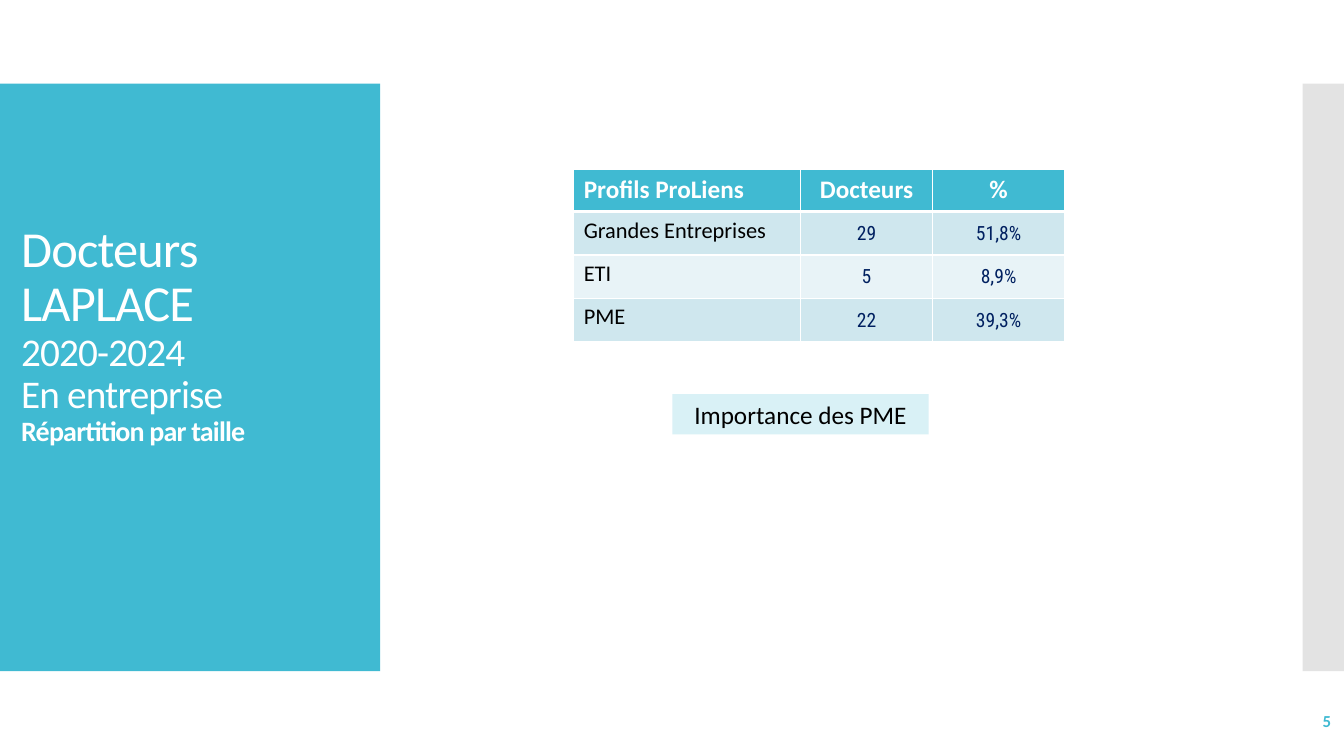
from dataclasses import dataclass

from lxml import etree
from pptx import Presentation
from pptx.dml.color import RGBColor
from pptx.enum import shapes, text
from pptx.oxml import ns
from pptx.util import Inches, Pt


@dataclass(frozen=True)
class Theme:
    accent: str = "40BAD2"
    side_strip: str = "C8C8C8"
    callout: str = "D9F1F6"
    bands: tuple = ("CFE7EE", "E8F3F7")
    white: str = "FFFFFF"
    black: str = "000000"
    figure: str = "002060"
    font: str = "Calibri"
    figure_font: str = "Roboto Condensed"
    title: int = 36
    subtitle: int = 28
    topic: int = 20
    heading: int = 18
    label: int = 16
    value: int = 14
    page: int = 12


THEME = Theme()
LEFT, CENTER, RIGHT = text.PP_ALIGN.LEFT, text.PP_ALIGN.CENTER, text.PP_ALIGN.RIGHT
MIDDLE = text.MSO_ANCHOR.MIDDLE

TITLE_LINES = [
    ("Docteurs LAPLACE", THEME.title, False),
    ("2020-2024", THEME.subtitle, False),
    ("En entreprise", THEME.subtitle, False),
    ("Répartition par taille", THEME.topic, True),
]
HEADINGS = ["Profils ProLiens", "Docteurs", "%"]
COMPANY_SIZES = [
    ("Grandes Entreprises", "29", "51,8%"),
    ("ETI", "5", "8,9%"),
    ("PME", "22", "39,3%"),
]


def style(paragraph, size, color, align=LEFT, bold=False, font=THEME.font):
    paragraph.alignment = align
    paragraph.font.name = font
    paragraph.font.size = Pt(size)
    paragraph.font.bold = bold
    paragraph.font.color.rgb = RGBColor.from_string(color)


def paint(fill, color):
    fill.solid()
    fill.fore_color.rgb = RGBColor.from_string(color)


def add_block(slide, left, top, width, height, color):
    """Add a plain rectangle without outline or shadow."""
    block = slide.shapes.add_shape(
        shapes.MSO_SHAPE.RECTANGLE,
        Inches(left), Inches(top), Inches(width), Inches(height))
    block.shadow.inherit = False
    block.line.fill.background()
    paint(block.fill, color)
    return block


def add_side_panels(slide):
    panel = add_block(slide, 0, 0.83, 3.77, 5.83, THEME.accent)
    strip = add_block(slide, 12.92, 0.83, 0.42, 5.83, THEME.side_strip)
    strip_color = strip.element.spPr.find(ns.qn("a:solidFill"))[0]
    etree.SubElement(strip_color, ns.qn("a:alpha"), val="50000")
    # The panels go behind the title placeholder.
    for block in (strip, panel):
        slide.shapes.element.insert(2, block.element)


def fill_title(slide):
    title = slide.shapes.title
    title.left, title.top = Inches(0.11), Inches(1.23)
    title.width, title.height = Inches(3.77), Inches(5.03)
    frame = title.text_frame
    frame.word_wrap = True
    frame.auto_size = text.MSO_AUTO_SIZE.NONE
    frame.vertical_anchor = MIDDLE
    frame.margin_right = Inches(0.3)
    frame.margin_bottom = Inches(0.88)
    frame.text = "\n".join(line for line, _, _ in TITLE_LINES)
    for paragraph, (_, size, bold) in zip(frame.paragraphs, TITLE_LINES):
        style(paragraph, size, THEME.white, bold=bold)
        paragraph.line_spacing = 0.9
        paragraph.space_before = Pt(0)
        paragraph.runs[0].font._element.set("spc", "-60")


def set_borders(cell, bottom):
    """Draw white cell borders, 1 pt except for the bottom one."""
    properties = cell._tc.get_or_add_tcPr()
    for side, width in (("L", 1), ("R", 1), ("T", 1), ("B", bottom)):
        line = etree.SubElement(properties, ns.qn(f"a:ln{side}"), w=str(Pt(width)))
        solid = etree.SubElement(line, ns.qn("a:solidFill"))
        etree.SubElement(solid, ns.qn("a:srgbClr"), val=THEME.white)


def fill_cell(cell, content, row, column):
    cell.text = content
    paragraph = cell.text_frame.paragraphs[0]
    align = CENTER if column else LEFT
    if row == 0:
        style(paragraph, THEME.heading, THEME.white, align, bold=True)
    elif column == 0:
        style(paragraph, THEME.label, THEME.black)
    else:
        style(paragraph, THEME.value, THEME.figure, align, font=THEME.figure_font)
        cell.vertical_anchor = MIDDLE
        cell.margin_left = cell.margin_right = cell.margin_top = Inches(0.01)
        cell.margin_bottom = 0
    set_borders(cell, 1 if row else 3)
    paint(cell.fill, THEME.bands[(row - 1) % 2] if row else THEME.accent)


def add_size_table(slide):
    rows = [HEADINGS, *COMPANY_SIZES]
    table = slide.shapes.add_table(
        len(rows), len(HEADINGS),
        Inches(5.69), Inches(1.68), Inches(4.87), Inches(1.71)).table
    for column, width in zip(table.columns, (2.25, 1.31, 1.31)):
        column.width = Inches(width)
    for r, contents in enumerate(rows):
        table.rows[r].height = Inches(0.43 if r else 0.42)
        for c, content in enumerate(contents):
            fill_cell(table.cell(r, c), content, r, c)


def add_callout(slide):
    callout = add_block(slide, 6.67, 3.91, 2.54, 0.4, THEME.callout)
    callout.text_frame.text = "Importance des PME"
    style(callout.text_frame.paragraphs[0], THEME.heading, THEME.black, CENTER)


def add_page_number(slide):
    frame = slide.shapes.add_textbox(
        Inches(11.63), Inches(6.95), Inches(1.67), Inches(0.4)).text_frame
    frame.word_wrap = True
    frame.vertical_anchor = MIDDLE
    frame.text = "5"
    style(frame.paragraphs[0], THEME.page, THEME.accent, RIGHT, bold=True)


def main():
    deck = Presentation()
    deck.slide_width, deck.slide_height = Inches(13.33), Inches(7.5)
    slide = deck.slides.add_slide(deck.slide_layouts.get_by_name("Title Only"))
    add_side_panels(slide)
    fill_title(slide)
    add_size_table(slide)
    add_page_number(slide)
    add_callout(slide)
    deck.save("out.pptx")


if __name__ == "__main__":
    main()
